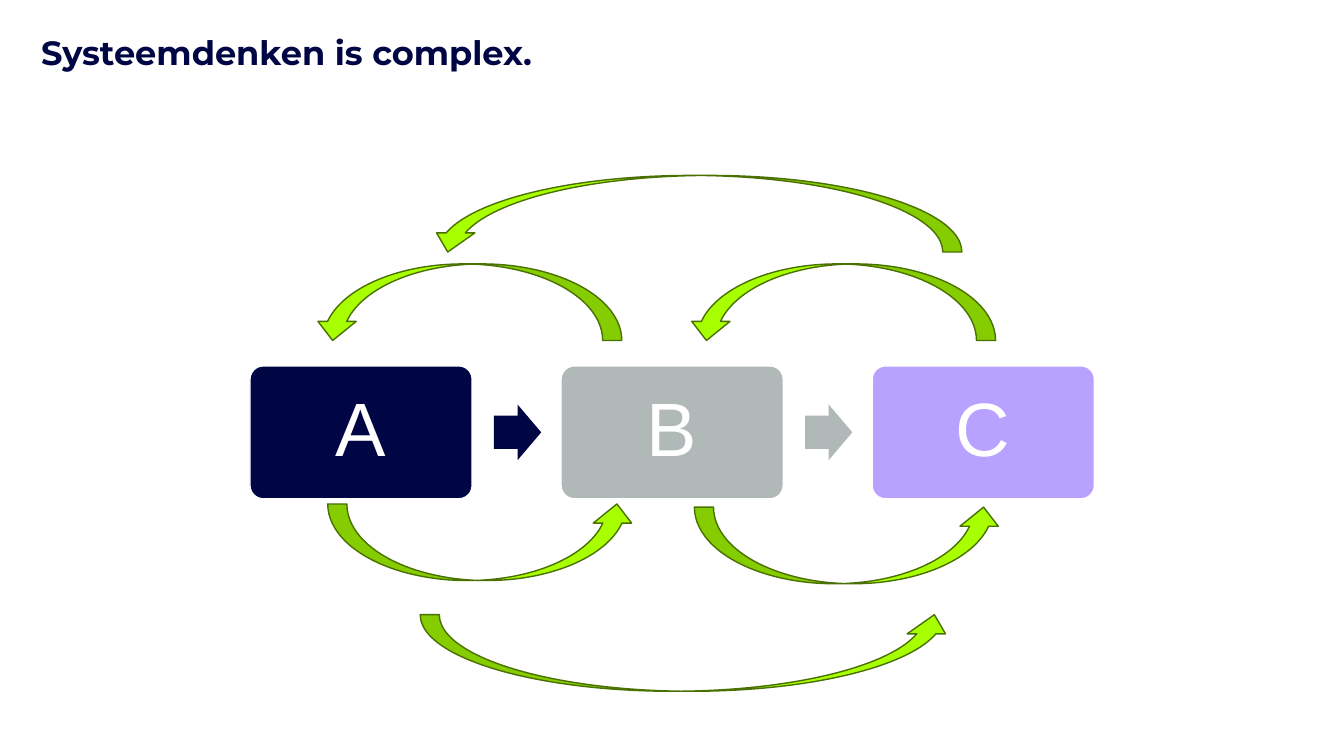
from pptx import Presentation
from pptx.dml.color import RGBColor
from pptx.enum.shapes import MSO_SHAPE as Shape
from pptx.enum.text import MSO_ANCHOR as Anchor, PP_ALIGN as Align
from pptx.util import Cm, Pt

TITLE = "Systeemdenken is complex."
NAVY, WHITE, LIME, GREEN = "000644", "FFFFFF", "A7FF00", "497000"
STEPS = [("A", NAVY), ("B", "B1B8B8"), ("C", "B8A1FF")]
LEFT, TOP, WIDE, HIGH, PITCH = 6.3, 9.22, 5.6, 3.35, 7.84
HEAD_W, HEAD_H, HEAD_GAP = 1.19, 1.4, 0.55
SHORT, LONG, CURVE_H = 7.77, 13.44, 1.93
LOOPS = [
    (10.59, 15.49, LONG, 0),
    (17.32, 6.65, SHORT, 180),
    (7.9, 6.65, SHORT, 180),
    (17.5, 12.78, SHORT, 0),
    (10.8, 4.42, LONG, 180),
    (8.26, 12.7, SHORT, 0),
]


def color(code):
    return RGBColor.from_string(code)


def write(frame, text, font, size, code, inset, bold=False):
    frame.word_wrap = True
    (frame.margin_left, frame.margin_top,
     frame.margin_right, frame.margin_bottom) = (Cm(n) for n in inset)
    para = frame.paragraphs[0]
    para.text = text
    para.line_spacing = 0.9
    para.font.name, para.font.size, para.font.bold = font, Pt(size), bold
    para.font.color.rgb = color(code)
    return para


def draw(slide, kind, x, y, w, h, fill, line=None):
    shape = slide.shapes.add_shape(kind, Cm(x), Cm(y), Cm(w), Cm(h))
    shape.shadow.inherit = False
    shape.fill.solid()
    shape.fill.fore_color.rgb = color(fill)
    if line:
        shape.line.color.rgb = color(line)
        shape.line.width = Pt(1)
    else:
        shape.line.fill.background()
    return shape


def main():
    """Build the slide on systems thinking."""
    deck = Presentation()
    deck.slide_width, deck.slide_height = Cm(33.87), Cm(19.05)
    slide = deck.slides.add_slide(deck.slide_layouts[6])

    title = slide.shapes.add_textbox(Cm(1.04), Cm(0.81), Cm(26.57), Cm(2.82))
    write(title.text_frame, TITLE, "Montserrat", 24, NAVY, (0, 0.1, 0, 0), True)

    for i, (name, fill) in enumerate(STEPS):
        x = LEFT + i * PITCH
        box = draw(slide, Shape.ROUNDED_RECTANGLE, x, TOP, WIDE, HIGH, fill, WHITE)
        box.adjustments[0] = 0.1
        box.text_frame.vertical_anchor = Anchor.MIDDLE
        para = write(box.text_frame, name, "Arial", 54, WHITE, [0.58] * 4)
        para.alignment = Align.CENTER
        if i < len(STEPS) - 1:
            head = draw(slide, Shape.RIGHT_ARROW, x + WIDE + HEAD_GAP,
                        TOP + (HIGH - HEAD_H) / 2, HEAD_W, HEAD_H, fill)
            head.adjustments[0] = 0.6

    for x, y, w, turn in LOOPS:
        loop = draw(slide, Shape.CURVED_UP_ARROW, x, y, w, CURVE_H, LIME, GREEN)
        loop.rotation = turn

    deck.save("out.pptx")


if __name__ == "__main__":
    main()
